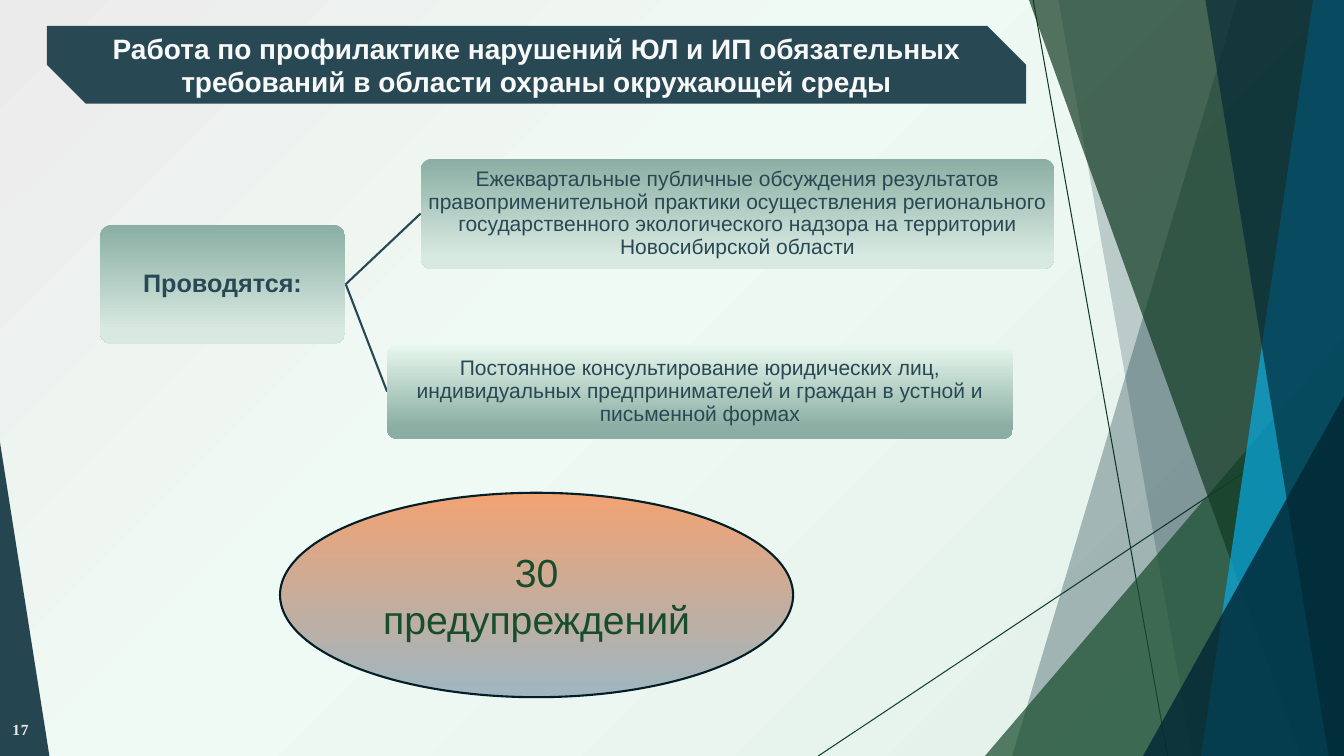
from copy import deepcopy
from pptx import Presentation
from pptx.dml.color import RGBColor
from pptx.enum.shapes import MSO_CONNECTOR, MSO_SHAPE
from pptx.enum.text import MSO_ANCHOR, PP_ALIGN
from pptx.oxml.ns import qn
from pptx.oxml.xmlchemy import OxmlElement
from pptx.util import Pt

COLORS = {
    "navy": "022734", "ink": "011D26", "slate": "284953",
    "forest": "113A22", "moss": "144126", "green": "174D2D", "cyan": "09ABE4",
    "sage": "8AAEA3", "mist": "D7E9E1", "mint": "E8F8EE",
    "peach": "F1A374", "steel": "9FB6C0", "white": "F8F8F8",
    "pale": "E1EFE9", "light": "F0FAF4", "grey": "EBEBEB",
}


def rgb(name):
    return RGBColor.from_string(COLORS[name])


def write(box, text, align, margins, spacing, font_format):
    frame = box.text_frame
    frame.word_wrap = True
    frame.vertical_anchor = MSO_ANCHOR.MIDDLE
    sides = ("margin_left", "margin_top", "margin_right", "margin_bottom")
    for side, margin in zip(sides, margins):
        setattr(frame, side, Pt(margin))
    paragraph = frame.paragraphs[0]
    paragraph.alignment = align
    paragraph.line_spacing = spacing
    run = paragraph.add_run()
    run.text = text
    for key, value in font_format.items():
        if key == "color":
            run.font.color.rgb = rgb(value)
        else:
            setattr(run.font, key, value)
    return run


prs = Presentation()
prs.slide_width, prs.slide_height = Pt(960), Pt(540)
slide = prs.slides.add_slide(prs.slide_layouts[6])
shapes = slide.shapes

backdrop = slide.background.fill
backdrop.gradient()
gradient = slide.element.find(".//" + qn("a:gradFill"))
stop_list = gradient.find(qn("a:gsLst"))
stop_list.append(deepcopy(stop_list[-1]))
backdrop_stops = [("pale", 0), ("light", 0.58), ("grey", 1)]
for stop, (color, position) in zip(backdrop.gradient_stops, backdrop_stops):
    stop.color.rgb = rgb(color)
    stop.position = position
radial = OxmlElement("a:path")
radial.set("path", "circle")
focus = OxmlElement("a:fillToRect")
focus.set("l", "100000")
focus.set("t", "100000")
radial.append(focus)
gradient.replace(gradient.find(qn("a:lin")), radial)

strokes = [
    ((738, 0), (834, 540), "forest", 0.75),
    ((960, 290), (584.5, 540), "moss", 0.75),
    ((247, 203), (276.5, 279.75), "slate", 1.5),
    ((247, 203), (300.5, 152.5), "slate", 1.5),
]
for start, end, color, weight in strokes:
    stroke = shapes.add_connector(MSO_CONNECTOR.STRAIGHT, *map(Pt, start + end))
    stroke.line.color.rgb = rgb(color)
    stroke.line.width = Pt(weight)
    stroke.element.spPr.append(OxmlElement("a:effectLst"))

facets = [
    ("band", (884, 723), "navy", 30),
    ("band", (756, 852), "navy", 20),
    ("triangle", (703.5, 240, 256.5, 300, 1), "green", 72),
    ("band", (735, 929.5), "forest", 70),
    ("band", (938, 858), "cyan", 70),
    ("band", (861, 949), "navy", 65),
    ("triangle", (816.5, 283, 143.5, 257, 1), "navy", 80),
    ("triangle", (0, 316, 35.3, 224, 0), "navy", 85),
]
for kind, geometry, color, opacity in facets:
    if kind == "band":
        top, bottom = geometry
        outline = shapes.build_freeform(Pt(top), 0)
        corners = [(960, 0), (960, 540), (bottom, 540)]
        outline.add_line_segments([(Pt(x), Pt(y)) for x, y in corners])
        facet = outline.convert_to_shape()
    else:
        *place, apex = geometry
        facet = shapes.add_shape(MSO_SHAPE.ISOSCELES_TRIANGLE, *map(Pt, place))
        facet.adjustments[0] = apex
    facet.shadow.inherit = False
    facet.line.fill.background()
    facet.fill.solid()
    facet.fill.fore_color.rgb = rgb(color)
    alpha = OxmlElement("a:alpha")
    alpha.set("val", str(opacity * 1000))
    facet.element.spPr.find(".//" + qn("a:srgbClr")).append(alpha)

usual, tight = (7.2, 3.6, 7.2, 3.6), (0.7, 0.7, 0.7, 0.7)
heading = {"name": "Arial", "size": Pt(20), "bold": True, "color": "white"}
lead = {"name": "Arial", "size": Pt(18), "bold": True, "color": "slate"}
detail = {"name": "Arial", "size": Pt(15), "color": "slate"}
total = {"name": "Arial", "size": Pt(28), "color": "green"}
numeral = {"name": "Times New Roman", "size": Pt(11), "bold": True, "color": "grey"}

panels = [
    (MSO_SHAPE.SNIP_2_DIAG_RECTANGLE, (33.5, 18.5, 699.5, 55.5), (0, 0.5),
     [("slate", 0), ("slate", 1)], None, usual, 1, heading,
     "Работа по профилактике нарушений ЮЛ и ИП обязательных требований "
     "в области охраны окружающей среды"),
    (MSO_SHAPE.OVAL, (200, 352, 366.5, 146), (),
     [("peach", 0), ("steel", 1)], "ink", usual, 1, total,
     "30 предупреждений"),
    (MSO_SHAPE.ROUNDED_RECTANGLE, (71.5, 160.5, 175, 85), (0.1,),
     [("sage", 0), ("mist", 0.88)], None, tight, 0.9, lead,
     "Проводятся:"),
    (MSO_SHAPE.ROUNDED_RECTANGLE, (276.5, 246, 447, 67.5), (0.1,),
     [("mint", 0), ("sage", 0.88)], None, tight, 0.9, detail,
     "Постоянное консультирование юридических лиц, индивидуальных "
     "предпринимателей и граждан в устной и письменной формах"),
    (MSO_SHAPE.ROUNDED_RECTANGLE, (300.5, 113.5, 452.5, 78.5), (0.1,),
     [("sage", 0), ("mist", 0.88)], None, tight, 0.9, detail,
     "Ежеквартальные публичные обсуждения результатов правоприменительной "
     "практики осуществления регионального государственного экологического "
     "надзора на территории Новосибирской области"),
]
for form, place, adjustments, stops, border, margins, spacing, style, text in panels:
    panel = shapes.add_shape(form, *map(Pt, place))
    panel.shadow.inherit = False
    for index, adjustment in enumerate(adjustments):
        panel.adjustments[index] = adjustment
    if stops[0][0] == stops[1][0]:
        panel.fill.solid()
        panel.fill.fore_color.rgb = rgb(stops[0][0])
    else:
        panel.fill.gradient()
        panel.fill.gradient_angle = 270
        for stop, (color, position) in zip(panel.fill.gradient_stops, stops):
            stop.color.rgb = rgb(color)
            stop.position = position
    if border:
        panel.line.color.rgb = rgb(border)
        panel.line.width = Pt(1.5)
    else:
        panel.line.fill.background()
    write(panel, text, PP_ALIGN.CENTER, margins, spacing, style)

page_number = shapes.add_textbox(0, Pt(507), Pt(27.5), Pt(28.5))
digits = write(page_number, "17", PP_ALIGN.RIGHT, (0, 3.6, 7.2, 3.6), 1, numeral)
digits.font._element.set("spc", "50")

prs.save("out.pptx")
